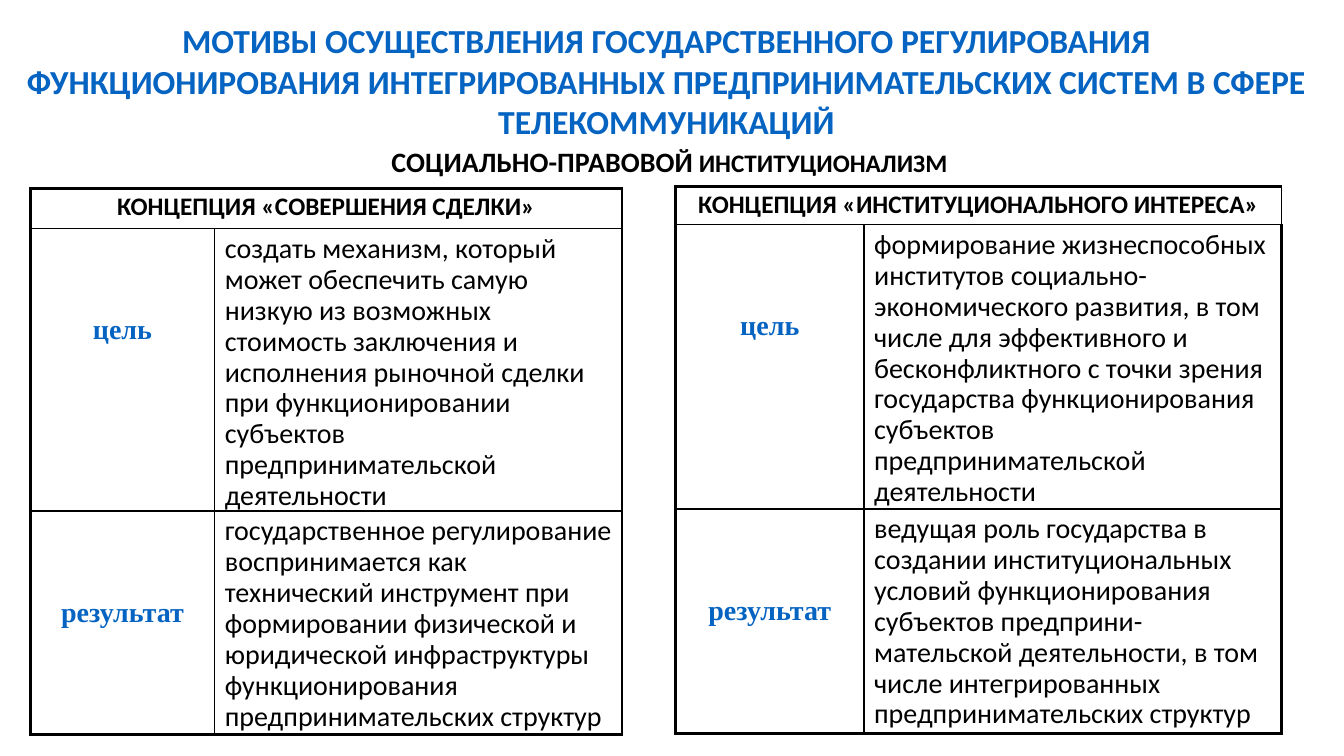
from lxml import etree
from pptx import Presentation
from pptx.dml.color import RGBColor
from pptx.enum.text import MSO_ANCHOR as Anchor, PP_ALIGN as Align
from pptx.oxml.ns import qn
from pptx.util import Inches, Pt

BLUE, BLACK = "0563C1", "000000"
THICK, THIN = 2.25, 1
TITLE = ("МОТИВЫ ОСУЩЕСТВЛЕНИЯ ГОСУДАРСТВЕННОГО РЕГУЛИРОВАНИЯ "
         "ФУНКЦИОНИРОВАНИЯ ИНТЕГРИРОВАННЫХ ПРЕДПРИНИМАТЕЛЬСКИХ СИСТЕМ "
         "В СФЕРЕ ТЕЛЕКОММУНИКАЦИЙ")
SUBTITLE = [("СОЦИАЛЬНО-ПРАВОВОЙ", 20), (" ИНСТИТУЦИОНАЛИЗМ", 18)]
DEAL = (
    "КОНЦЕПЦИЯ «СОВЕРШЕНИЯ СДЕЛКИ»",
    "создать механизм, который может обеспечить самую низкую из возможных "
    "стоимость заключения и исполнения рыночной сделки при функционировании "
    "субъектов предпринимательской деятельности",
    "государственное регулирование воспринимается как технический инструмент "
    "при формировании физической и юридической инфраструктуры "
    "функционирования предпринимательских структур",
)
INTEREST = (
    "КОНЦЕПЦИЯ «ИНСТИТУЦИОНАЛЬНОГО ИНТЕРЕСА»",
    "формирование жизнеспособных институтов социально-экономического "
    "развития, в том числе для эффективного и бесконфликтного с точки зрения "
    "государства функционирования субъектов предпринимательской деятельности",
    "ведущая роль государства в создании институциональных условий "
    "функционирования субъектов предприни-мательской деятельности, в том "
    "числе интегрированных предпринимательских структур",
)


def rgb(color):
    return RGBColor.from_string(color)


def set_attrs(target, values):
    for name, value in values.items():
        setattr(target, name, value)


def add_run(p, text, size, color=BLACK, bold=True, font="Calibri"):
    r = p.add_run()
    r.text = text
    set_attrs(r.font, {"size": Pt(size), "bold": bold, "name": font})
    r.font.color.rgb = rgb(color)


def fill_heading(sp, box, runs, color):
    names = ("left", "top", "width", "height")
    set_attrs(sp, {n: Inches(v) for n, v in zip(names, box)})
    tf = sp.text_frame
    set_attrs(tf, {"word_wrap": True, "vertical_anchor": Anchor.TOP})
    p = tf.paragraphs[0]
    p.alignment = Align.CENTER
    for text, size in runs:
        add_run(p, text, size, color)


def set_borders(cell, row, col):
    widths = {
        "L": THICK if col == 0 else THIN,
        "R": THICK if col == 1 else THIN,
        "T": THICK if row == 0 else THIN,
        "B": THICK if row == 2 else THIN,
    }
    tc_pr = cell._tc.get_or_add_tcPr()
    for side, width in widths.items():
        ln = etree.SubElement(tc_pr, qn(f"a:ln{side}"), w=str(int(Pt(width))))
        fill = etree.SubElement(ln, qn("a:solidFill"))
        etree.SubElement(fill, qn("a:srgbClr"), val=BLACK)


def fill_cell(cell, text, size, align, top=0.05, **font):
    set_attrs(cell, {
        "margin_left": Inches(0.1), "margin_right": Inches(0.1),
        "margin_top": Inches(top), "margin_bottom": 0,
        "vertical_anchor": Anchor.TOP,
    })
    p = cell.text_frame.paragraphs[0]
    set_attrs(p, {"alignment": align, "line_spacing": 0.9})
    add_run(p, text, size, **font)


def add_concept(s, left, top, cols, rows, texts):
    frame = s.shapes.add_table(3, 2, Inches(left), Inches(top),
                               Inches(sum(cols)), Inches(sum(rows)))
    table = frame.table
    set_attrs(table, {"first_row": False, "horz_banding": False})
    for column, width in zip(table.columns, cols):
        column.width = Inches(width)
    for row, height in zip(table.rows, rows):
        row.height = Inches(height)
    for i in range(3):
        for j in range(2):
            set_borders(table.cell(i, j), i, j)
            table.cell(i, j).fill.background()
    header, goal, result = texts
    table.cell(0, 0).merge(table.cell(0, 1))
    fill_cell(table.cell(0, 0), header, 18, Align.CENTER)
    for i, (label, body) in enumerate([("цель", goal), ("результат", result)], 1):
        fill_cell(table.cell(i, 0), label, 20, Align.CENTER, top=0.88,
                  color=BLUE, font="Times New Roman")
        fill_cell(table.cell(i, 1), body, 20, Align.LEFT, bold=False)


def main():
    prs = Presentation()
    set_attrs(prs, {"slide_width": Inches(13.33), "slide_height": Inches(7.5)})
    s = prs.slides.add_slide(prs.slide_layouts[5])
    fill_heading(s.shapes.title, (0.08, 0.15, 13.06, 1.3), [(TITLE, 24)], BLUE)
    fill_heading(s.shapes.add_textbox(0, 0, 0, 0), (0.49, 1.38, 12.3, 0.44),
                 SUBTITLE, BLACK)
    add_concept(s, 0.3, 1.87, (1.83, 4.04), (0.4, 2.8, 2.22), DEAL)
    add_concept(s, 6.7, 1.85, (1.87, 4.14), (0.38, 2.82, 2.23), INTEREST)
    prs.save("out.pptx")


if __name__ == "__main__":
    main()
